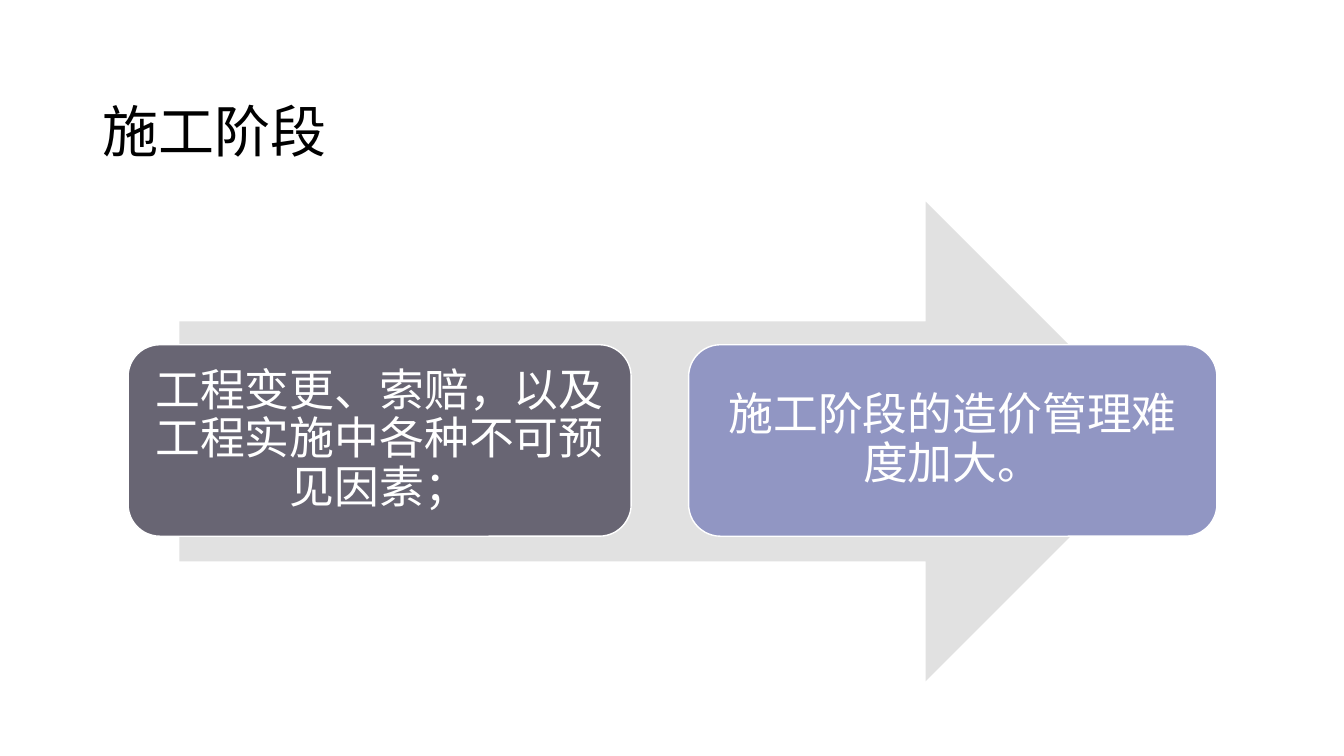
from dataclasses import dataclass

import pptx
import pptx.dml.color
import pptx.enum.shapes
import pptx.enum.text
import pptx.util
from pptx.util import Inches

SHAPE = pptx.enum.shapes.MSO_SHAPE
ALIGN = pptx.enum.text.PP_ALIGN
ANCHOR = pptx.enum.text.MSO_ANCHOR


@dataclass(frozen=True)
class Theme:
    title_color: str = "000000"
    text_color: str = "FFFFFF"
    arrow: str = "E1E1E1"
    cause: str = "686573"
    effect: str = "9196C3"
    outline: str = "FFFFFF"
    title_size: int = 40
    card_size: int = 32
    title_font: str = "Times New Roman"
    cjk_font: str = "Noto Sans CJK SC"


THEME = Theme()


def rgb(value):
    return pptx.dml.color.RGBColor.from_string(value)


def write(tf, text, align, spacing, size, color, font):
    """Fill a middle-anchored frame with one formatted paragraph."""
    tf.text = text
    tf.word_wrap = True
    tf.auto_size = pptx.enum.text.MSO_AUTO_SIZE.NONE
    tf.vertical_anchor = ANCHOR.MIDDLE
    p = tf.paragraphs[0]
    p.alignment = align
    p.line_spacing = spacing
    r = p.runs[0]
    r.font.size = pptx.util.Pt(size)
    r.font.color.rgb = rgb(color)
    r.font.name = font
    ea = r.font._element.makeelement(pptx.oxml.ns.qn("a:ea"), {"typeface": THEME.cjk_font})
    r.font._element.find(pptx.oxml.ns.qn("a:latin")).addnext(ea)


def add_title(slide, text):
    sp = slide.shapes.title
    sp.left, sp.top = Inches(0.92), Inches(0.4)
    sp.width, sp.height = Inches(11.5), Inches(1.45)
    write(sp.text_frame, text, ALIGN.LEFT, 1.5,
          THEME.title_size, THEME.title_color, THEME.title_font)


def add_block(slide, kind, left, top, width, height, fill):
    sp = slide.shapes.add_shape(kind, Inches(left), Inches(top), Inches(width), Inches(height))
    sp.shadow.inherit = False
    sp.fill.solid()
    sp.fill.fore_color.rgb = rgb(fill)
    sp.line.fill.background()
    return sp


def add_card(slide, left, width, fill, text):
    sp = add_block(slide, SHAPE.ROUNDED_RECTANGLE, left, 3.42, width, 1.9, fill)
    sp.line.color.rgb = rgb(THEME.outline)
    sp.line.width = pptx.util.Pt(1)
    tf = sp.text_frame
    # The rounded corners already inset the text by about 0.09 inch.
    tf.margin_left = tf.margin_right = Inches(0.13)
    tf.margin_top = tf.margin_bottom = Inches(0.13)
    write(tf, text, ALIGN.CENTER, 0.9, THEME.card_size, THEME.text_color, THEME.cjk_font)


def main():
    prs = pptx.Presentation()
    prs.slide_width, prs.slide_height = Inches(13.33), Inches(7.5)
    slide = prs.slides.add_slide(prs.slide_layouts.get_by_name("Title Only"))
    add_title(slide, "施工阶段")
    add_block(slide, SHAPE.RIGHT_ARROW, 1.78, 2, 9.78, 4.76, THEME.arrow)
    add_card(slide, 1.27, 4.99, THEME.cause, "工程变更、索赔，以及工程实施中各种不可预见因素；")
    add_card(slide, 6.83, 5.24, THEME.effect, "施工阶段的造价管理难度加大。")
    prs.save("out.pptx")


if __name__ == "__main__":
    main()
